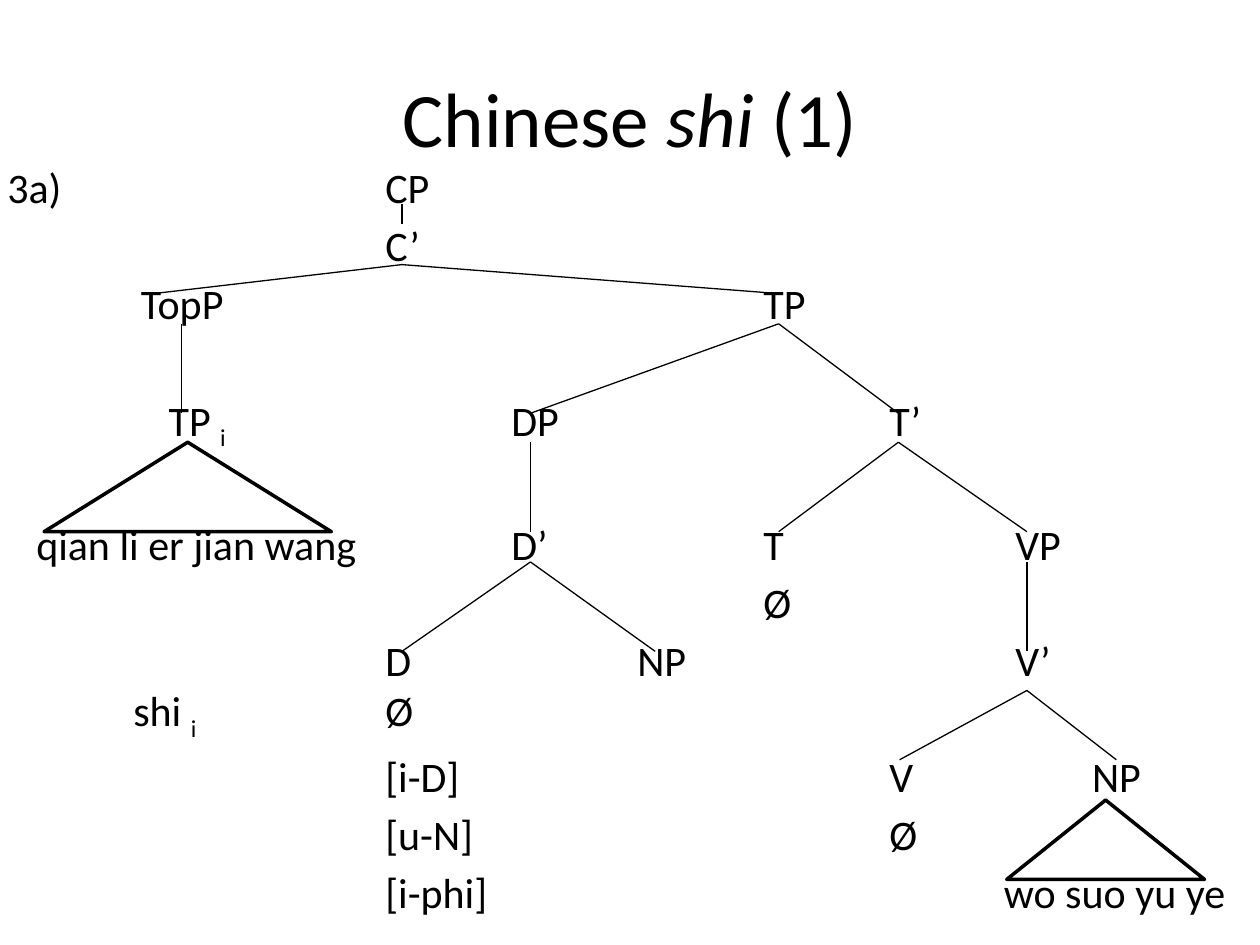
from lxml import etree
from pptx import Presentation
from pptx.dml.color import RGBColor
from pptx.enum.shapes import MSO_CONNECTOR, MSO_SHAPE
from pptx.enum.text import MSO_ANCHOR, PP_ALIGN
from pptx.oxml.ns import qn
from pptx.util import Inches, Pt

STRAIGHT = MSO_CONNECTOR.STRAIGHT
TRIANGLE = MSO_SHAPE.ISOSCELES_TRIANGLE
MIDDLE = MSO_ANCHOR.MIDDLE
CENTER = PP_ALIGN.CENTER
TITLE_ONLY = 5
COLORS = {"ink": "000000", "paper": "FFFFFF"}
FONT = "Calibri"
ROW_GAP = 4.4
SKIPPED_ROW = 38.1

# Each row: space before in points, then (tab stop in inches, label, subscript).
ROWS = [
    (ROW_GAP, [(0, "3a)", ""), (3, "CP", "")]),
    (ROW_GAP, [(3, "C’", "")]),
    (ROW_GAP, [(1.06, "TopP", ""), (6, "TP", "")]),
    (SKIPPED_ROW, [(1.28, "TP ", "i"), (4, "DP", ""), (7, "T’", "")]),
    (SKIPPED_ROW, [(0.23, "qian li er jian wang", ""), (4, "D’", ""),
                   (6, "T", ""), (8, "VP", "")]),
    (ROW_GAP, [(6, "Ø", "")]),
    (ROW_GAP, [(3, "D", ""), (5, "NP", ""), (8, "V’", "")]),
    (0, [(1, "shi ", "i"), (3, "Ø", "")]),
    (ROW_GAP, [(3, "[i-D]", ""), (7, "V", ""), (8.61, "NP", "")]),
    (ROW_GAP, [(3, "[u-N]", ""), (7, "Ø", "")]),
    (ROW_GAP, [(3, "[i-phi]", ""), (7.91, "wo suo yu ye", "")]),
]
BRANCHES = [
    ((3.23, 0.39), 0.55, [3.23]),
    ((3.23, 0.87), 1.1, [1.26, 6.22]),
    ((1.48, 1.34), 2.05, [1.48]),
    ((6.22, 1.34), 2.05, [4.25, 7.17]),
    ((4.25, 2.28), 2.99, [4.25]),
    ((7.17, 2.28), 2.99, [6.22, 8.19]),
    ((4.25, 3.23), 3.94, [3.23, 5.24]),
    ((8.19, 3.23), 3.94, [8.19]),
    ((8.19, 4.25), 4.8, [7.18, 8.9]),
]
PHRASES = [(0.39, 2.28, 2.28, 0.71), (8.03, 5.12, 1.57, 0.63)]


def color(name):
    return RGBColor.from_string(COLORS[name])


def set_font(font, size):
    font.name = FONT
    font.size = Pt(size)
    font.color.rgb = color("ink")


def add_title(page, left, top, width, height):
    title = page.shapes.title
    title.left, title.top = Inches(left), Inches(top)
    title.width, title.height = Inches(width), Inches(height)
    title.text_frame.vertical_anchor = MIDDLE
    para = title.text_frame.paragraphs[0]
    para.alignment = CENTER
    set_font(para.font, 44)
    for text, italic in [("Chinese ", False), ("shi ", True), ("(1)", False)]:
        span = para.add_run()
        span.text = text
        span.font.italic = italic


def add_tab_stops(para, stops):
    tabs = etree.SubElement(para._p.get_or_add_pPr(), qn("a:tabLst"))
    for stop in stops:
        etree.SubElement(tabs, qn("a:tab"), pos=str(Inches(stop)), algn="l")


def add_labels(page, left, top, width, height):
    box = page.shapes.add_textbox(Inches(left), Inches(top), Inches(width), Inches(height))
    frame = box.text_frame
    frame.word_wrap = True
    for index, (gap, labels) in enumerate(ROWS):
        para = frame.add_paragraph() if index else frame.paragraphs[0]
        para.space_before = Pt(gap)
        add_tab_stops(para, [stop for stop, _, _ in labels if stop])
        set_font(para.font, 24)
        for stop, text, subscript in labels:
            para.add_run().text = "\t" + text if stop else text
            if subscript:
                span = para.add_run()
                span.text = subscript
                span._r.get_or_add_rPr().set("baseline", "-25000")


def add_branches(page, left, top):
    for (parent_x, parent_y), child_y, children in BRANCHES:
        for child_x in children:
            branch = page.shapes.add_connector(
                STRAIGHT, Inches(left + parent_x), Inches(top + parent_y),
                Inches(left + child_x), Inches(top + child_y))
            branch.line.color.rgb = color("ink")
            branch.line.width = Pt(0.75)
            etree.SubElement(branch._element.spPr, qn("a:effectLst"))


def add_phrase_triangles(page, left, top):
    for x, y, width, height in PHRASES:
        triangle = page.shapes.add_shape(
            TRIANGLE, Inches(left + x), Inches(top + y), Inches(width), Inches(height))
        triangle.shadow.inherit = False
        triangle.fill.solid()
        triangle.fill.fore_color.rgb = color("paper")
        triangle.line.color.rgb = color("ink")
        triangle.line.width = Pt(2)


def add_tree(page, left, top, width, height):
    add_labels(page, left, top, width, height)
    add_branches(page, left, top)
    add_phrase_triangles(page, left, top)


def main():
    deck = Presentation()
    deck.slide_width, deck.slide_height = Inches(10), Inches(7.5)
    page = deck.slides.add_slide(deck.slide_layouts[TITLE_ONLY])
    add_title(page, 0.5, 0.3, 9, 1.25)
    add_tree(page, -0.04, 1.23, 10, 6.27)
    deck.save("out.pptx")


if __name__ == "__main__":
    main()
